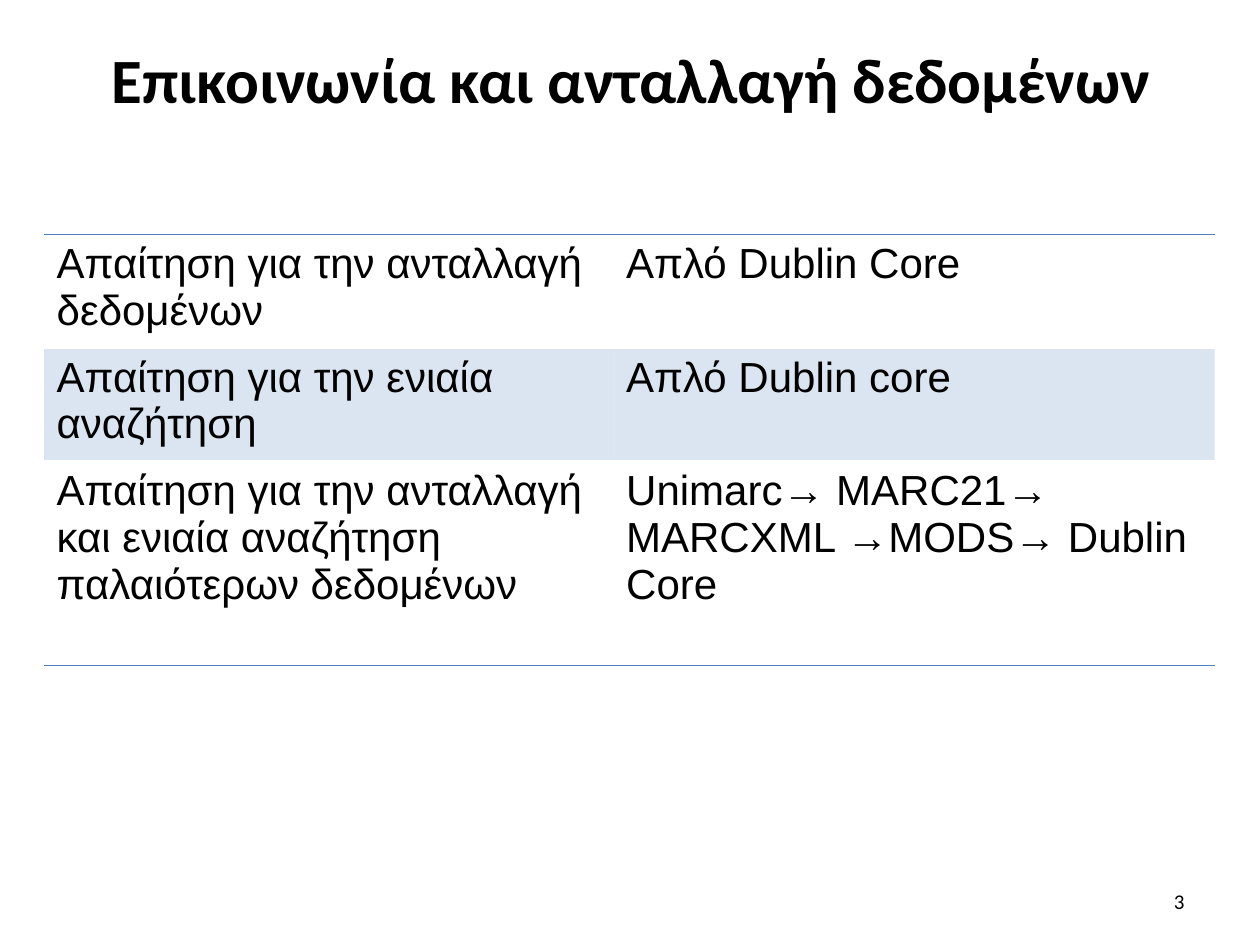
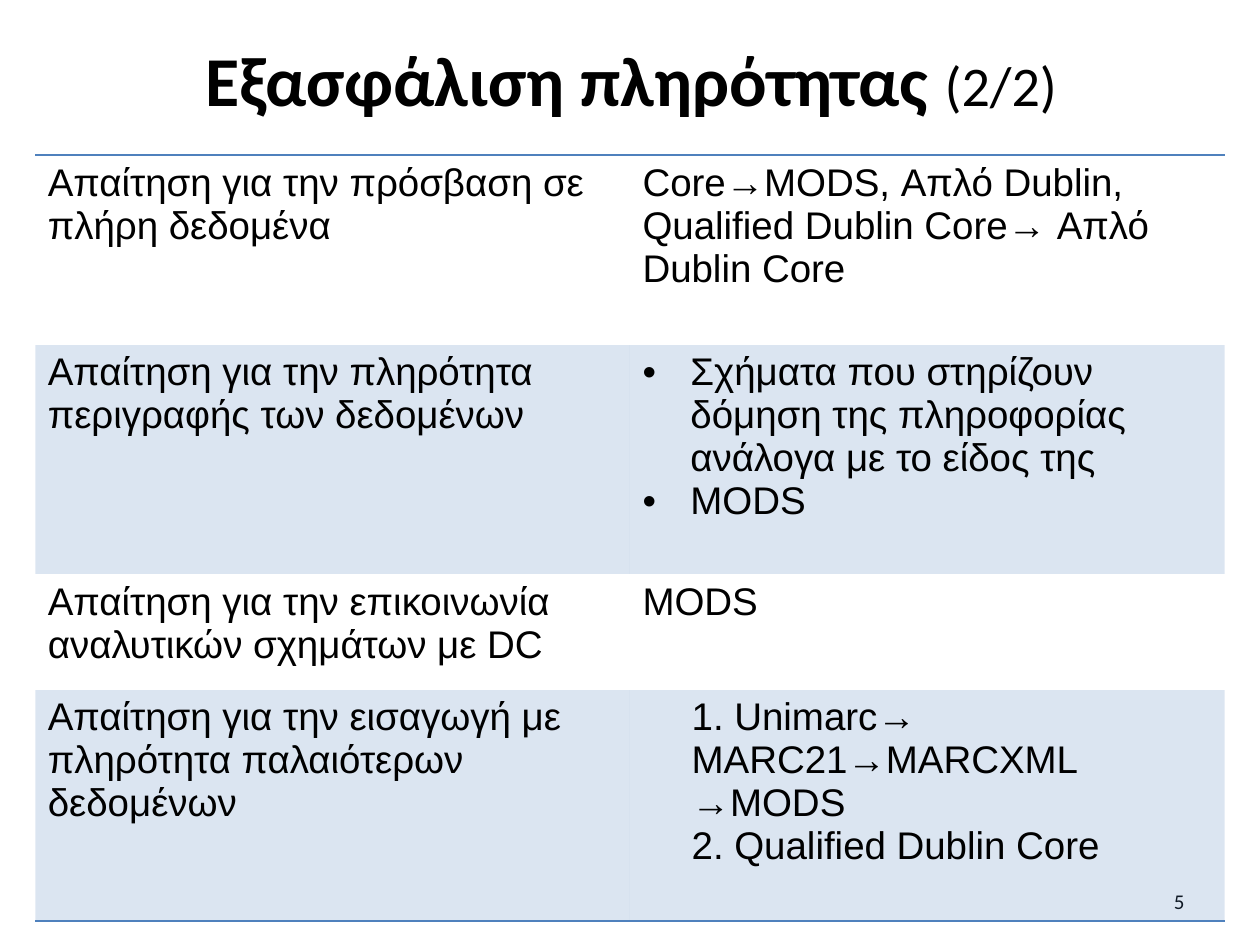
from dataclasses import dataclass

from lxml.etree import SubElement
from pptx import Presentation
from pptx.dml.color import RGBColor
from pptx.enum.text import MSO_ANCHOR, PP_ALIGN
from pptx.oxml.ns import qn
from pptx.util import Inches, Pt


@dataclass(frozen=True)
class Theme:
    text: str = "000000"
    accent: str = "4F81BD"
    divider: str = "FFFFFF"
    band_opacity: int = 20
    title_font: str = "Calibri"
    table_font: str = "Arial"
    number_size: int = 12
    border_width: int = 1


THEME = Theme()
TITLE_BOX = (0.51, 0.13, 9, 0.99)
NUMBER_BOX = (7.17, 6.95, 2.33, 0.4)

# Content: title runs are (text, size, bold); a paragraph is a text
# or (text, left indent, first-line indent, bullet)
SLIDES = [
    {
        "title": [("Επικοινωνία και ανταλλαγή δεδομένων", 36, True)],
        "number": "3",
        "table_position": (0.35, 1.86),
        "columns": [4.52, 4.77],
        "row_heights": [0.88, 0.88, 1.62],
        "size": 24,
        "rows": [
            (["Απαίτηση για την ανταλλαγή δεδομένων"], ["Απλό Dublin Core"]),
            (["Απαίτηση για την ενιαία αναζήτηση"], ["Απλό Dublin core"]),
            (["Απαίτηση για την ανταλλαγή και ενιαία αναζήτηση παλαιότερων δεδομένων"],
             ["Unimarc→ MARC21→ MARCXML →MODS→ Dublin Core"]),
        ],
    },
    {
        "title": [("Εξασφάλιση πληρότητας ", 40, True), ("(2/2)", 32, False)],
        "number": "5",
        "table_position": (0.28, 1.23),
        "columns": [4.72, 4.72],
        "row_heights": [1.5, 1.83, 0.91, 1.84],
        "size": 22,
        "rows": [
            (["Απαίτηση για την πρόσβαση σε πλήρη δεδομένα"],
             ["Core→MODS, Απλό Dublin, Qualified Dublin Core→ Απλό Dublin Core"]),
            (["Απαίτηση για την πληρότητα περιγραφής των δεδομένων"],
             [("Σχήματα που στηρίζουν δόμηση της πληροφορίας ανάλογα με το είδος της",
               0.38, -0.38, "•"),
              ("MODS", 0.38, -0.38, "•")]),
            (["Απαίτηση για την επικοινωνία αναλυτικών σχημάτων με DC"], ["MODS"]),
            (["Απαίτηση για την εισαγωγή με πληρότητα παλαιότερων δεδομένων"],
             [("1. Unimarc→ MARC21→MARCXML →MODS", 0.39, 0, None),
              ("2. Qualified Dublin Core", 0.79, -0.4, None)]),
        ],
    },
]


def add_run(paragraph, text, name, size, bold=False):
    run = paragraph.add_run()
    run.text = text
    font_format = {"name": name, "size": Pt(size), "bold": bold}
    for attribute, value in font_format.items():
        setattr(run.font, attribute, value)
    run.font.color.rgb = RGBColor.from_string(THEME.text)


def add_text_box(slide, box, runs, alignment):
    frame = slide.shapes.add_textbox(*map(Inches, box)).text_frame
    frame.word_wrap = True
    frame.vertical_anchor = MSO_ANCHOR.MIDDLE
    paragraph = frame.paragraphs[0]
    paragraph.alignment = alignment
    for text, size, bold in runs:
        add_run(paragraph, text, THEME.title_font, size, bold)


def indent_paragraph(paragraph, left, first_line, bullet):
    properties = paragraph._p.get_or_add_pPr()
    properties.set("marL", str(Inches(left)))
    properties.set("indent", str(Inches(first_line)))
    if bullet:
        SubElement(properties, qn("a:buFont"), typeface=THEME.table_font)
        SubElement(properties, qn("a:buChar"), char=bullet)


def set_borders(cell, top, bottom):
    properties = cell._tc.get_or_add_tcPr()
    sides = {"a:lnL": None, "a:lnR": None, "a:lnT": top, "a:lnB": bottom}
    for tag, color in sides.items():
        line = SubElement(properties, qn(tag), w=str(Pt(THEME.border_width)))
        if color:
            fill = SubElement(line, qn("a:solidFill"))
            SubElement(fill, qn("a:srgbClr"), val=color)
        else:
            SubElement(line, qn("a:noFill"))


def set_band(cell, banded):
    if not banded:
        cell.fill.background()
        return
    cell.fill.solid()
    cell.fill.fore_color.rgb = RGBColor.from_string(THEME.accent)
    color = cell._tc.tcPr.find(qn("a:solidFill")).find(qn("a:srgbClr"))
    SubElement(color, qn("a:alpha"), val=str(THEME.band_opacity * 1000))


def fill_cell(cell, paragraphs, size):
    frame = cell.text_frame
    for index, item in enumerate(paragraphs):
        paragraph = frame.add_paragraph() if index else frame.paragraphs[0]
        if isinstance(item, tuple):
            text, *indents = item
            indent_paragraph(paragraph, *indents)
        else:
            text = item
        add_run(paragraph, text, THEME.table_font, size)


def add_requirements_table(slide, content):
    rows, columns = content["rows"], content["columns"]
    heights = content["row_heights"]
    box = (*content["table_position"], sum(columns), sum(heights))
    table = slide.shapes.add_table(len(rows), len(columns), *map(Inches, box)).table
    table.first_row = table.horz_banding = False
    for column, width in zip(table.columns, columns):
        column.width = Inches(width)
    for row_index, row in enumerate(rows):
        table.rows[row_index].height = Inches(heights[row_index])
        # Accent rules close the table; every second row is tinted
        top = THEME.divider if row_index else THEME.accent
        bottom = THEME.accent if row_index == len(rows) - 1 else THEME.divider
        for column_index, paragraphs in enumerate(row):
            cell = table.cell(row_index, column_index)
            set_borders(cell, top, bottom)
            set_band(cell, row_index % 2 == 1)
            fill_cell(cell, paragraphs, content["size"])


def main():
    presentation = Presentation()
    presentation.slide_width = Inches(10)
    presentation.slide_height = Inches(7.5)
    for content in SLIDES:
        slide = presentation.slides.add_slide(presentation.slide_layouts[6])
        add_text_box(slide, TITLE_BOX, content["title"], PP_ALIGN.CENTER)
        number_run = (content["number"], THEME.number_size, False)
        add_text_box(slide, NUMBER_BOX, [number_run], PP_ALIGN.RIGHT)
        add_requirements_table(slide, content)
    presentation.save("out.pptx")


if __name__ == "__main__":
    main()
